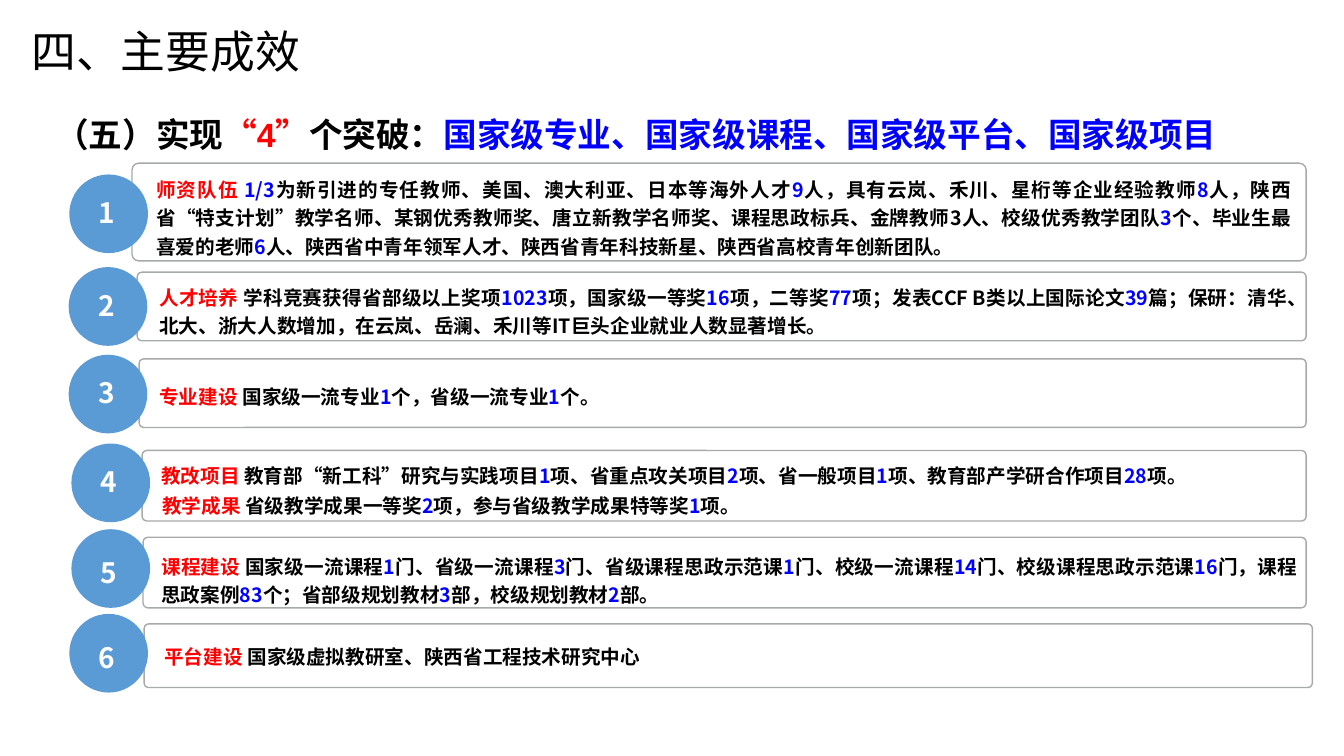
"""Builds the slide on main results: a headline and six numbered rows."""
from dataclasses import dataclass

from pptx import Presentation
from pptx.dml.color import RGBColor
from pptx.enum.shapes import MSO_SHAPE
from pptx.enum.text import MSO_ANCHOR, MSO_AUTO_SIZE, PP_ALIGN
from pptx.oxml.ns import qn
from pptx.util import Pt


@dataclass(frozen=True)
class Theme:
    font: str = "Noto Sans CJK SC"
    latin: str = "Arial"
    black: str = "000000"
    red: str = "FF0000"
    blue: str = "0000FF"
    white: str = "FFFFFF"
    disc: str = "5B9BD5"
    edge: str = "A6AAA9"
    title: int = 32
    head: int = 24
    label: int = 20
    body: int = 14


def write(para, text, size, color, bold=True, font=Theme.font):
    run = para.add_run()
    run.text = text
    run.font.name = font
    run.font.size = Pt(size)
    run.font.bold = bold
    run.font.color.rgb = RGBColor.from_string(color)
    asian = run.font._element.makeelement(qn("a:ea"), {"typeface": Theme.font})
    run.font._element.find(qn("a:latin")).addnext(asian)


class Page:
    def __init__(self, slide, theme):
        self.slide = slide
        self.theme = theme

    def title(self, text, left, top, width, height):
        shape = self.slide.shapes.title
        shape.left, shape.top = Pt(left), Pt(top)
        shape.width, shape.height = Pt(width), Pt(height)
        frame = shape.text_frame
        frame.auto_size = MSO_AUTO_SIZE.NONE
        frame.vertical_anchor = MSO_ANCHOR.TOP
        para = frame.paragraphs[0]
        para.alignment = PP_ALIGN.LEFT
        para.line_spacing = Pt(42)
        write(para, text, self.theme.title, self.theme.black, bold=False)

    def text(self, left, top, width, height, pitch, inset=True, align=PP_ALIGN.LEFT):
        shape = self.slide.shapes.add_textbox(Pt(left), Pt(top), Pt(width), Pt(height))
        frame = shape.text_frame
        frame.word_wrap = True
        if not inset:
            frame.margin_left = frame.margin_right = 0
            frame.margin_top = frame.margin_bottom = 0
        para = frame.paragraphs[0]
        para.alignment = align
        para.line_spacing = Pt(pitch)
        return para

    def headline(self, runs, left, top, width, height):
        para = self.text(left, top, width, height, 30)
        for text, color, font in runs:
            write(para, text, self.theme.head, color, font=font)

    def frame(self, left, top, right, height):
        shape = self.slide.shapes.add_shape(
            MSO_SHAPE.ROUNDED_RECTANGLE, Pt(left), Pt(top), Pt(right - left), Pt(height))
        shape.shadow.inherit = False
        shape.adjustments[0] = 0.069
        shape.fill.background()
        shape.line.color.rgb = RGBColor.from_string(self.theme.edge)
        shape.line.width = Pt(1)

    def disc(self, number, left, top, drop):
        side = 56.2
        shape = self.slide.shapes.add_shape(
            MSO_SHAPE.OVAL, Pt(left), Pt(top), Pt(side), Pt(side))
        shape.shadow.inherit = False
        shape.fill.solid()
        shape.fill.fore_color.rgb = RGBColor.from_string(self.theme.disc)
        shape.line.fill.background()
        para = self.text(left + 14, top + drop, 28, 31.7, 25.5)
        write(para, str(number), self.theme.label, self.theme.white)

    def entry(self, lead, body, left, top, width, height):
        """Write a red lead, then body text whose |-marked figures are blue."""
        para = self.text(left, top, width, height, 20.5, inset=False, align=PP_ALIGN.JUSTIFY)
        write(para, lead + " ", self.theme.body, self.theme.red)
        for turn, part in enumerate(body.split("|")):
            if part:
                color = self.theme.blue if turn % 2 else self.theme.black
                write(para, part, self.theme.body, color)


ROWS = [
    ((94.3, 116.6, 933, 69.8), (49.5, 124.6, 10), [
        ("师资队伍", "|1/3|为新引进的专任教师、美国、澳大利亚、日本等海外人才|9|人，"
         "具有云岚、禾川、星桁等企业经验教师|8|人，陕西省“特支计划”教学名师、"
         "某钢优秀教师奖、唐立新教学名师奖、课程思政标兵、金牌教师3人、"
         "校级优秀教学团队|3|个、毕业生最喜爱的老师|6|人、陕西省中青年领军人才、"
         "陕西省青年科技新星、陕西省高校青年创新团队。", 111.6, 123.1, 810.7, 73.4)]),
    ((98, 194.4, 933, 49), (49, 190.8, 10), [
        ("人才培养", "学科竞赛获得省部级以上奖项|1023|项，国家级一等奖|16|项，"
         "二等奖|77|项；发表CCF B类以上国际论文|39|篇；保研：清华、北大、浙大人数增加，"
         "在云岚、岳澜、禾川等IT巨头企业就业人数显著增长。", 113.8, 200.2, 805.7, 43.9)]),
    ((99.4, 256.3, 933, 49), (49, 253.4, 10), [
        ("专业建设", "国家级一流专业|1|个，省级一流专业|1|个。", 113.8, 271.4, 805.7, 22.3)]),
    ((101.5, 321.8, 933, 50.4), (51, 316.8, 10), [
        ("教改项目", "教育部“新工科”研究与实践项目|1|项、省重点攻关项目|2|项、"
         "省一般项目|1|项、教育部产学研合作项目|28|项。", 115.2, 327.6, 810.7, 22.3),
        ("教学成果", "省级教学成果一等奖|2|项，参与省级教学成果特等奖|1|项。",
         115.9, 349.2, 810.7, 22.3)]),
    ((102.2, 383.8, 933, 50.4), (51, 378, 13.7), [
        ("课程建设", "国家级一流课程|1|门、省级一流课程|3|门、省级课程思政示范课|1|门、"
         "校级一流课程|14|门、校级课程思政示范课|16|门，课程思政案例|83|个；"
         "省部级规划教材|3|部，校级规划教材|2|部。", 115.2, 392.4, 811.4, 39.6)]),
    ((103, 445.7, 937.4, 45.4), (49.5, 438.5, 13.7), [
        ("平台建设", "国家级虚拟教研室、陕西省工程技术研究中心",
         117.4, 457.2, 544.3, 25.9)]),
]


def main():
    deck = Presentation()
    deck.slide_width, deck.slide_height = Pt(960), Pt(540)
    theme = Theme()
    page = Page(deck.slides.add_slide(deck.slide_layouts[5]), theme)
    page.title("四、主要成效", 15.1, 9.4, 323.3, 46.1)
    page.headline([
        ("（五）实现", theme.black, theme.font),
        ("“4”", theme.red, theme.latin),
        ("个突破", theme.black, theme.font),
        ("：", theme.black, theme.latin),
        ("国家级专业、国家级课程、国家级平台、国家级项目", theme.blue, theme.latin),
    ], 32.4, 76.3, 913, 94.3)
    for number, (box, disc, entries) in enumerate(ROWS, 1):
        page.frame(*box)
        page.disc(number, *disc)
        for entry in entries:
            page.entry(*entry)
    deck.save("out.pptx")


if __name__ == "__main__":
    main()
